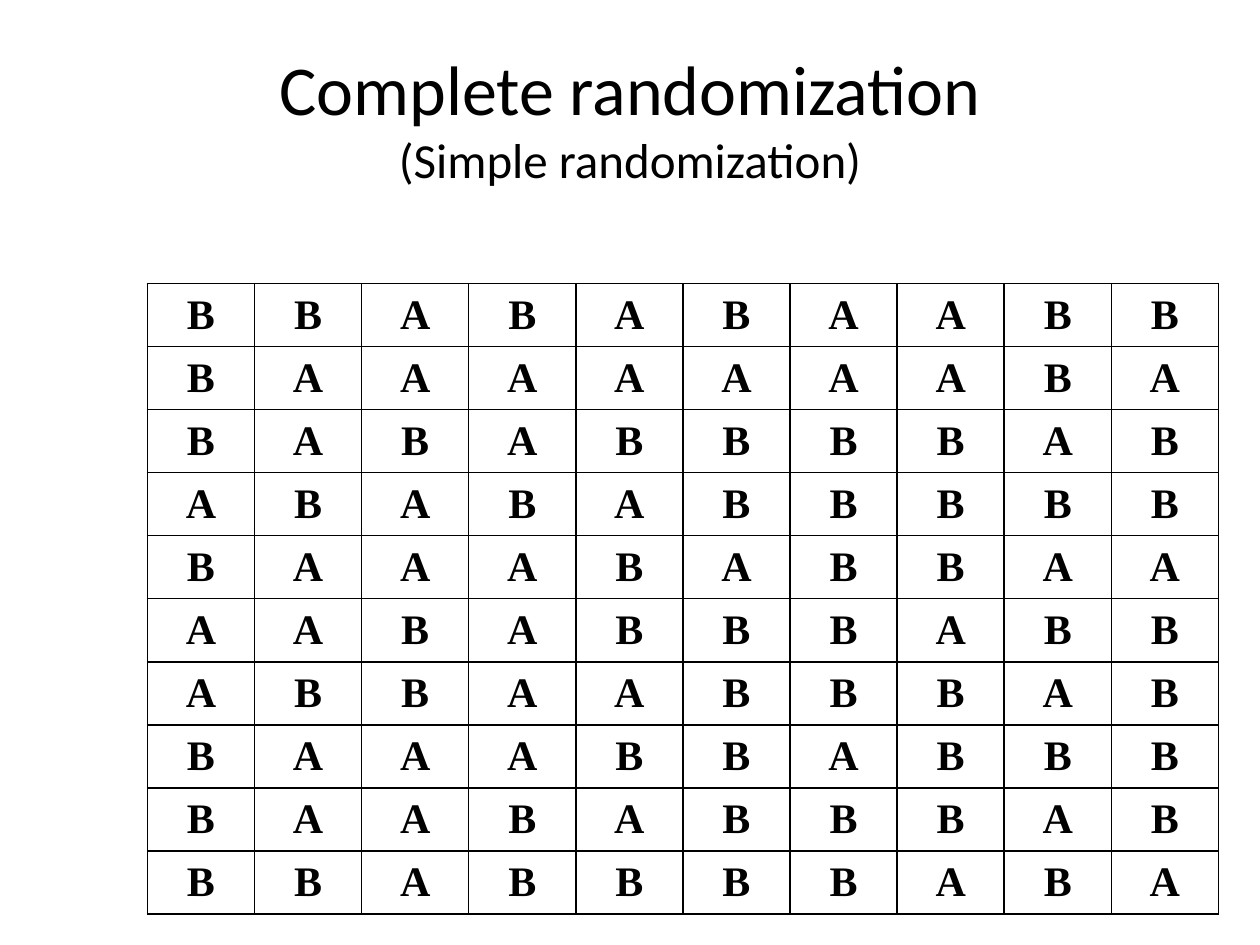
from lxml import etree
from pptx import Presentation
from pptx.dml.color import RGBColor
from pptx.enum.text import MSO_ANCHOR, PP_ALIGN
from pptx.oxml.ns import qn
from pptx.util import Inches, Pt

CENTER = PP_ALIGN.CENTER
MIDDLE = MSO_ANCHOR.MIDDLE
BLACK = RGBColor(0x00, 0x00, 0x00)
SLIDE_WIDTH, SLIDE_HEIGHT = Inches(10), Inches(7.5)
COLUMN_WIDTH, ROW_HEIGHT = Inches(0.85), Inches(0.49)
HANGING = Inches(0.38)
BORDER_WIDTH = Pt(1)
BORDER_SIDES = ("a:lnL", "a:lnR", "a:lnT", "a:lnB")
ALLOCATIONS = (
    "BBABABAABB",
    "BAAAAAAABA",
    "BABABBBBAB",
    "ABABABBBBB",
    "BAAABABBAA",
    "AABABBBABB",
    "ABBAABBBAB",
    "BAAABBABBB",
    "BAABABBBAB",
    "BBABBBBABA",
)


def style_span(span, font_name, size, bold=False):
    """Give a run its font, size, weight and black colour."""
    span.font.name = font_name
    span.font.size = Pt(size)
    span.font.bold = bold
    span.font.color.rgb = BLACK


def add_title(page, text, sizes):
    """Add a centred title whose lines each have their own size."""
    box = page.shapes.add_textbox(
        int(SLIDE_WIDTH * 0.05), int(SLIDE_HEIGHT * 0.04),
        int(SLIDE_WIDTH * 0.9), Inches(1.25))
    frame = box.text_frame
    frame.word_wrap = True
    frame.vertical_anchor = MIDDLE
    para = frame.paragraphs[0]
    para.text = text
    para.alignment = CENTER
    for span, size in zip(para.runs, sizes):
        style_span(span, "Calibri", size)


def add_borders(cell):
    """Draw a thin black line on every side of a cell."""
    properties = cell._tc.get_or_add_tcPr()
    for side in BORDER_SIDES:
        line = etree.SubElement(properties, qn(side), w=str(BORDER_WIDTH))
        fill = etree.SubElement(line, qn("a:solidFill"))
        etree.SubElement(fill, qn("a:srgbClr"), val=str(BLACK))


def fill_cell(cell, letter):
    """Write one treatment letter into a bordered, unfilled cell."""
    add_borders(cell)
    cell.fill.background()
    cell.vertical_anchor = MIDDLE
    para = cell.text_frame.paragraphs[0]
    para.text = letter
    para.alignment = CENTER
    properties = para._p.get_or_add_pPr()
    properties.set("marL", str(HANGING))
    properties.set("indent", str(-HANGING))
    style_span(para.runs[0], "Times New Roman", 24, bold=True)


def add_allocation_table(page, allocations):
    """Add the grid of treatment letters, one string for each row."""
    row_count, column_count = len(allocations), len(allocations[0])
    table = page.shapes.add_table(
        row_count, column_count,
        int(SLIDE_WIDTH * 0.117), int(SLIDE_HEIGHT * 0.3),
        COLUMN_WIDTH * column_count, ROW_HEIGHT * row_count).table
    table.first_row = False
    table.horz_banding = False
    for row, letters in zip(table.rows, allocations):
        for cell, letter in zip(row.cells, letters):
            fill_cell(cell, letter)


def main():
    """Build the slide and save the deck."""
    deck = Presentation()
    deck.slide_width, deck.slide_height = SLIDE_WIDTH, SLIDE_HEIGHT
    page = deck.slides.add_slide(deck.slide_layouts[6])
    add_title(page, "Complete randomization\v(Simple randomization)", (40, 28))
    add_allocation_table(page, ALLOCATIONS)
    deck.save("out.pptx")


if __name__ == "__main__":
    main()
